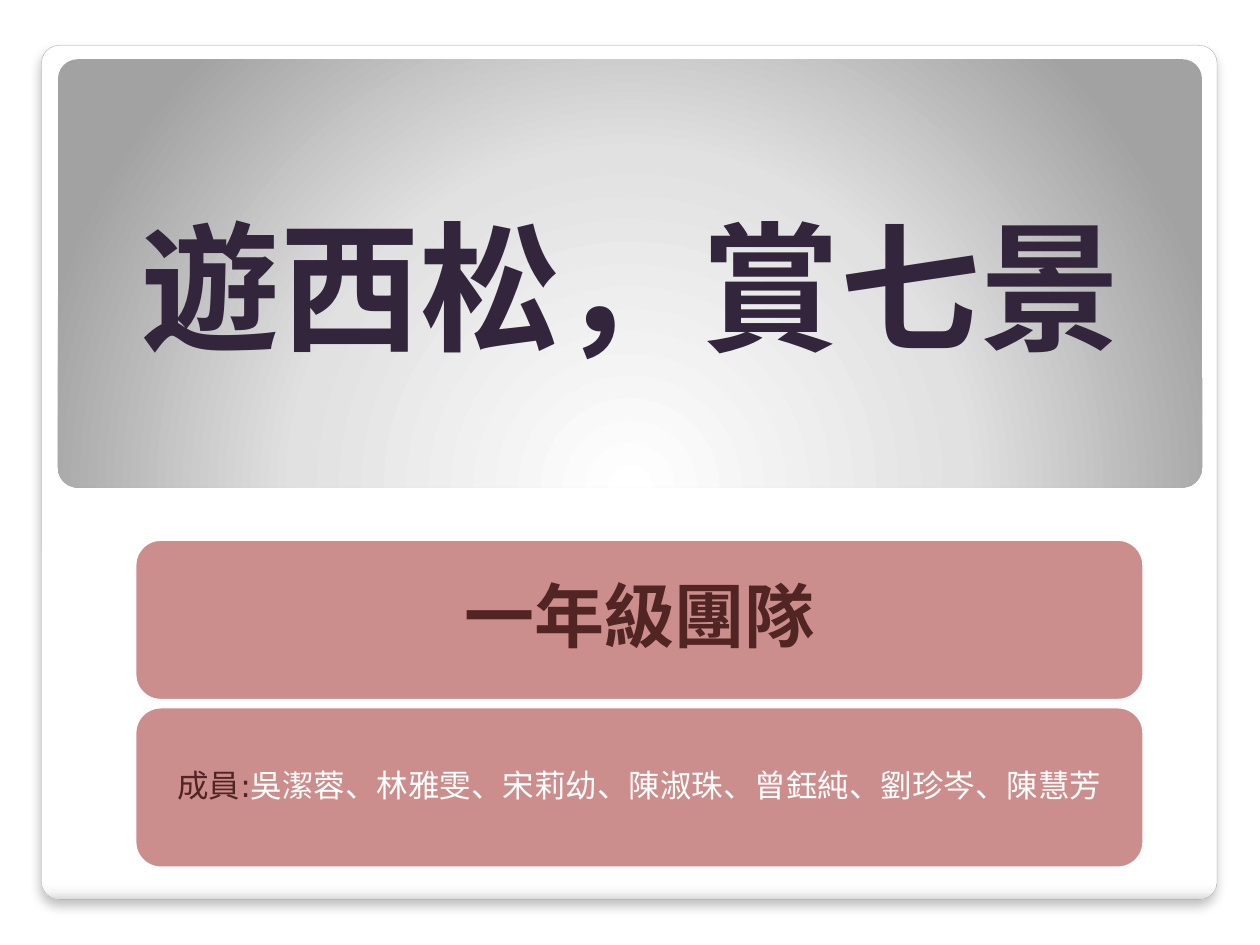
"""Build the title slide of a first-grade team's seven-sights tour."""
from lxml import etree
from pptx import Presentation
from pptx.dml.color import RGBColor
from pptx.enum import shapes, text
from pptx.oxml import parse_xml
from pptx.oxml.ns import nsdecls, qn
from pptx.util import Inches, Pt

FONT = "DejaVu Sans"
TITLE = ("遊西松，賞七景", 80, "33253B", True)
TEAM_ROWS = [
    (0.17, [("一年級團隊", 40, "512524", True)]),
    (0.07, [("成員:", 18, "512524", False),
            ("吳潔蓉、林雅雯、宋莉幼、陳淑珠、曾鈺純、劉珍岑、陳慧芳", 18, "FFFFFF", False)]),
]
FRAME_STOPS = [(0, "FFFFFF"), (98, "FFFFFF"), (99, "F7F7F7"), (100, "DADADA")]
BANNER_STOPS = [(0, "FFFFFF"), (55, "E1E1E1"), (100, "A2A2A2")]
DOWNWARD = '<a:lin ang="5400000" scaled="0"/>'
FROM_BOTTOM = ('<a:path path="circle"><a:fillToRect l="50000" t="175000" '
               'r="50000" b="-75000"/></a:path>')
FRAME_SHADOW = (f'<a:effectLst {nsdecls("a")}><a:outerShdw blurRad="{Pt(6)}" dist="{Pt(4)}" '
                'dir="5400000" algn="t" rotWithShape="0"><a:srgbClr val="000000">'
                '<a:alpha val="25000"/></a:srgbClr></a:outerShdw></a:effectLst>')
ROW_TOP, ROW_STEP = 4.27, 1.33


def color(value):
    return RGBColor.from_string(value)


def add_panel(slide, box, corner=None):
    panel = slide.shapes.add_shape(shapes.MSO_SHAPE.ROUNDED_RECTANGLE, *map(Inches, box))
    panel.shadow.inherit = False
    panel.line.fill.background()
    if corner is not None:
        panel.adjustments[0] = corner
    return panel


def set_line(panel, value, width):
    panel.line.color.rgb = color(value)
    panel.line.width = Pt(width)


def set_gradient(panel, stops, direction):
    marks = "".join(f'<a:gs pos="{at * 1000}"><a:srgbClr val="{value}"/></a:gs>'
                    for at, value in stops)
    gradient = parse_xml(f'<a:gradFill {nsdecls("a")} rotWithShape="1">'
                         f'<a:gsLst>{marks}</a:gsLst>{direction}</a:gradFill>')
    panel.element.spPr.find(qn("a:prstGeom")).addnext(gradient)


def write(frame, parts, inset, anchor):
    frame.word_wrap = True
    frame.vertical_anchor = anchor
    frame.margin_left = frame.margin_right = Inches(inset)
    frame.margin_top = frame.margin_bottom = Inches(inset)
    paragraph = frame.paragraphs[0]
    paragraph.alignment = text.PP_ALIGN.CENTER
    for words, size, value, bold in parts:
        run = paragraph.add_run()
        run.text = words
        run.font.size, run.font.bold, run.font.name = Pt(size), bold, FONT
        run.font.color.rgb = color(value)
        east_asian = etree.Element(qn("a:ea"), typeface=FONT)
        run.font._element.find(qn("a:latin")).addnext(east_asian)
    return paragraph


def main():
    deck = Presentation()
    deck.slide_width, deck.slide_height = Inches(10), Inches(7.5)
    slide = deck.slides.add_slide(deck.slide_layouts[6])

    frame = add_panel(slide, (0.33, 0.36, 9.33, 6.78), 0.021)
    set_gradient(frame, FRAME_STOPS, DOWNWARD)
    set_line(frame, "A4A4A4", 0.16)
    effects = frame.element.spPr.find(qn("a:effectLst"))
    effects.getparent().replace(effects, parse_xml(FRAME_SHADOW))

    banner = add_panel(slide, (0.46, 0.47, 9.08, 3.4), 0.046)
    set_gradient(banner, BANNER_STOPS, FROM_BOTTOM)

    title = slide.shapes.add_textbox(*map(Inches, (0.51, 1.25, 9, 1.72)))
    write(title.text_frame, [TITLE], 0.05, text.MSO_ANCHOR.BOTTOM)

    for index, (inset, parts) in enumerate(TEAM_ROWS):
        row = add_panel(slide, (1.06, ROW_TOP + index * ROW_STEP, 8.03, 1.3))
        row.fill.solid()
        row.fill.fore_color.rgb = color("CC8E8C")
        set_line(row, "FFFFFF", 3.35)
        paragraph = write(row.text_frame, parts, inset, text.MSO_ANCHOR.MIDDLE)
        paragraph.line_spacing = 0.9

    deck.save("out.pptx")


if __name__ == "__main__":
    main()
